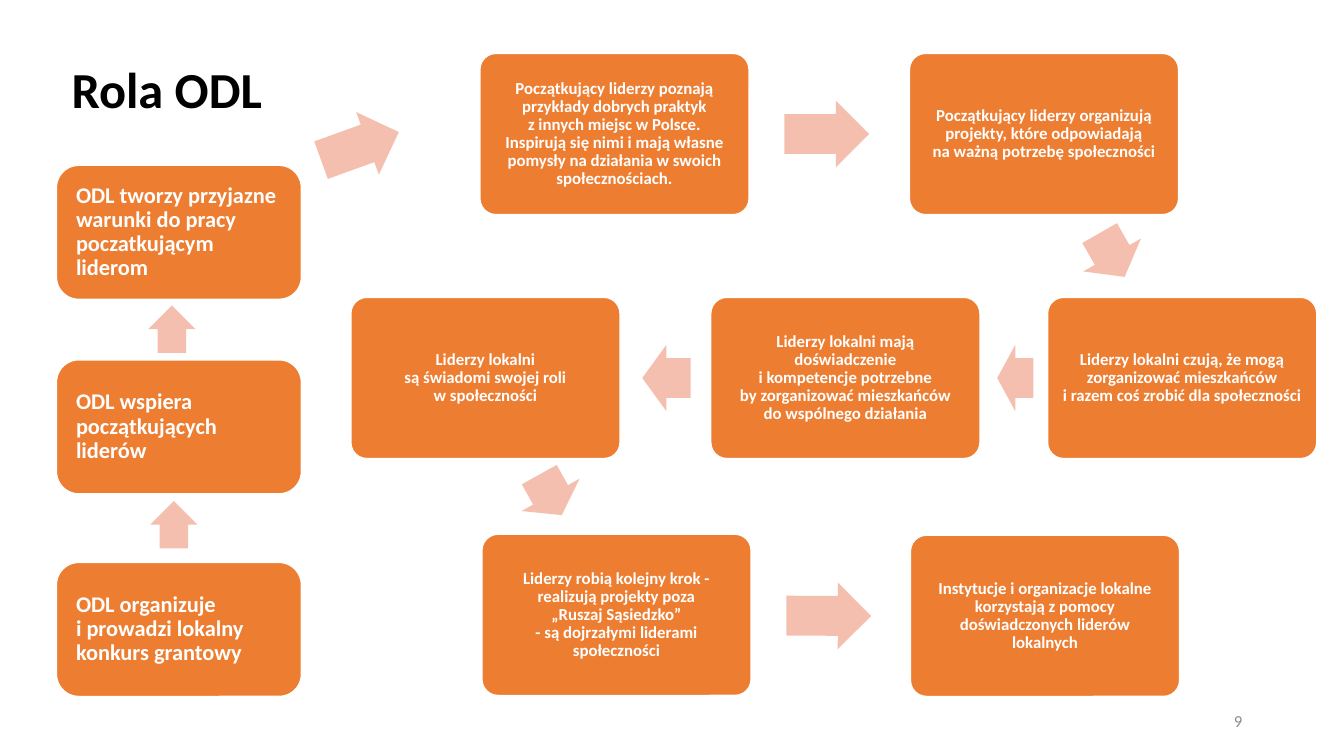
from copy import deepcopy

from pptx import Presentation
from pptx.dml.color import RGBColor
from pptx.enum.shapes import MSO_SHAPE
from pptx.enum.text import MSO_ANCHOR, MSO_AUTO_SIZE, PP_ALIGN
from pptx.oxml.ns import qn
from pptx.util import Inches, Pt

ORANGE, PEACH, WHITE, GREY, BLACK = "ED7D31", "F4BFAE", "FFFFFF", "8C8C8C", "000000"


def add_shape(kind, box, color):
    sp = slide.shapes.add_shape(kind, *map(Inches, box))
    sp.shadow.inherit = False
    sp.fill.solid()
    sp.fill.fore_color.rgb = RGBColor.from_string(color)
    return sp


def write(tf, text, size, color, align, bold=True):
    """Fill the first paragraph; line breaks get the same format as the runs."""
    p = tf.paragraphs[0]
    p.text = text
    p.alignment = align
    for r in p.runs:
        r.font.name = "Calibri"
        r.font.size = Pt(size)
        r.font.bold = bold
        r.font.color.rgb = RGBColor.from_string(color)
    for br in p._p.findall(qn("a:br")):
        br.append(deepcopy(p.runs[0]._r.rPr))
    return p


prs = Presentation()
prs.slide_width, prs.slide_height = Inches(13.33), Inches(7.5)
slide = prs.slides.add_slide(prs.slide_layouts[5])

title = slide.shapes.title
title.left, title.top, title.width, title.height = map(Inches, (0.61, 0.53, 2.11, 0.71))
tf = title.text_frame
tf.word_wrap = False
tf.auto_size = MSO_AUTO_SIZE.NONE
tf.vertical_anchor = MSO_ANCHOR.TOP
write(tf, "Rola ODL", 36, BLACK, PP_ALIGN.LEFT)

# Cards: left, top, text
odl_steps = [
    (0.56, 1.64, "ODL tworzy przyjazne warunki do pracy poczatkującym liderom"),
    (0.56, 3.57, "ODL wspiera początkujących liderów"),
    (0.56, 5.58, "ODL organizuje\ni prowadzi lokalny konkurs grantowy"),
]
leader_steps = [
    (4.76, 0.53, "Początkujący liderzy poznają przykłady dobrych praktyk\n"
                 "z innych miejsc w Polsce.\n"
                 "Inspirują się nimi i mają własne pomysły na działania w swoich społecznościach."),
    (9.02, 0.53, "Początkujący liderzy organizują projekty, które odpowiadają\n"
                 "na ważną potrzebę społeczności"),
    (10.39, 2.95, "Liderzy lokalni czują, że mogą zorganizować mieszkańców\n"
                  "i razem coś zrobić dla społeczności"),
    (7.05, 2.95, "Liderzy lokalni mają doświadczenie\ni kompetencje potrzebne\n"
                 "by zorganizować mieszkańców\ndo wspólnego działania"),
    (3.48, 2.95, "Liderzy lokalni\nsą świadomi swojej roli\nw społeczności"),
    (4.78, 5.3, "Liderzy robią kolejny krok - realizują projekty poza\n"
                "„Ruszaj Sąsiedzko”\n- są dojrzałymi liderami społeczności"),
    (9.03, 5.31, "Instytucje i organizacje lokalne korzystają z pomocy "
                 "doświadczonych liderów lokalnych"),
]
# Card style: steps, width, height, corner, margin, text size, alignment
card_groups = [
    (odl_steps, 2.43, 1.33, 0.1667, 0.13, 16, PP_ALIGN.LEFT),
    (leader_steps, 2.67, 1.6, 0.1, 0.1, 12, PP_ALIGN.CENTER),
]
for steps, width, height, corner, margin, size, align in card_groups:
    for left, top, text in steps:
        sp = add_shape(MSO_SHAPE.ROUNDED_RECTANGLE, (left, top, width, height), ORANGE)
        sp.adjustments[0] = corner
        sp.line.color.rgb = RGBColor.from_string(WHITE)
        sp.line.width = Pt(1)
        tf = sp.text_frame
        tf.word_wrap = True
        tf.vertical_anchor = MSO_ANCHOR.MIDDLE
        tf.margin_left = tf.margin_right = Inches(margin)
        tf.margin_top = tf.margin_bottom = Inches(margin)
        write(tf, text, size, WHITE, align).line_spacing = 0.9

# Arrows: left, top, width, height, rotation
arrows = [
    (1.49, 4.97, 0.47, 0.47, 270),
    (1.47, 3.03, 0.47, 0.47, 270),
    (3.16, 1.12, 0.82, 0.66, 340.1),
    (7.78, 1, 0.84, 0.66, 0),
    (10.78, 2.2, 0.5, 0.66, 60.3),
    (9.89, 3.42, 0.36, 0.66, 180),
    (6.37, 3.42, 0.48, 0.66, 180),
    (5.23, 4.58, 0.46, 0.66, 60.9),
    (7.8, 5.78, 0.84, 0.66, 0.2),
]
for *box, rotation in arrows:
    sp = add_shape(MSO_SHAPE.RIGHT_ARROW, box, PEACH)
    sp.adjustments[0], sp.adjustments[1] = 0.6, 0.5
    sp.line.fill.background()
    sp.rotation = rotation

page_number = slide.shapes.add_textbox(*map(Inches, (9.42, 6.95, 3, 0.4)))
tf = page_number.text_frame
tf.word_wrap = True
tf.vertical_anchor = MSO_ANCHOR.MIDDLE
write(tf, "9", 12, GREY, PP_ALIGN.RIGHT, bold=False)

prs.save("out.pptx")
